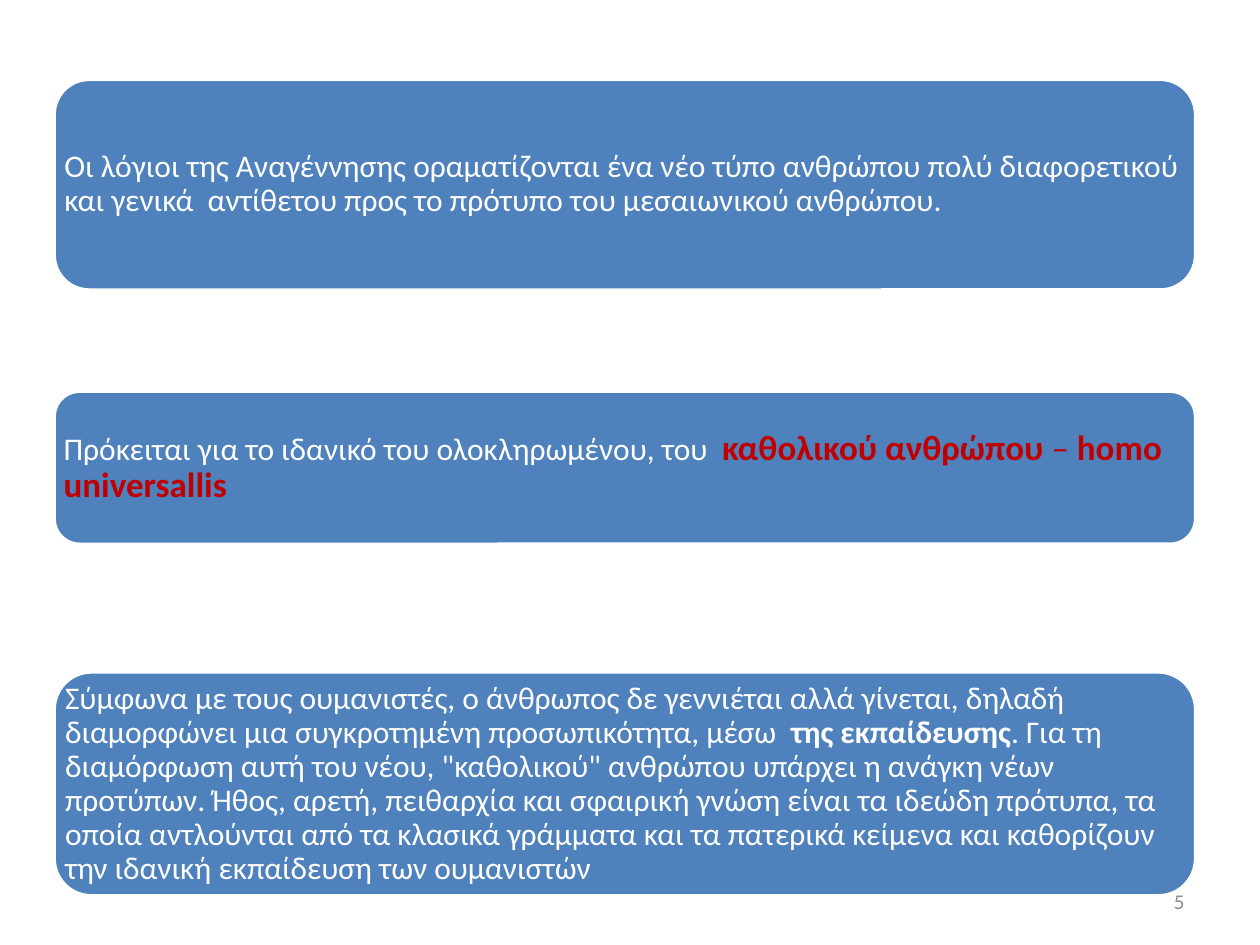
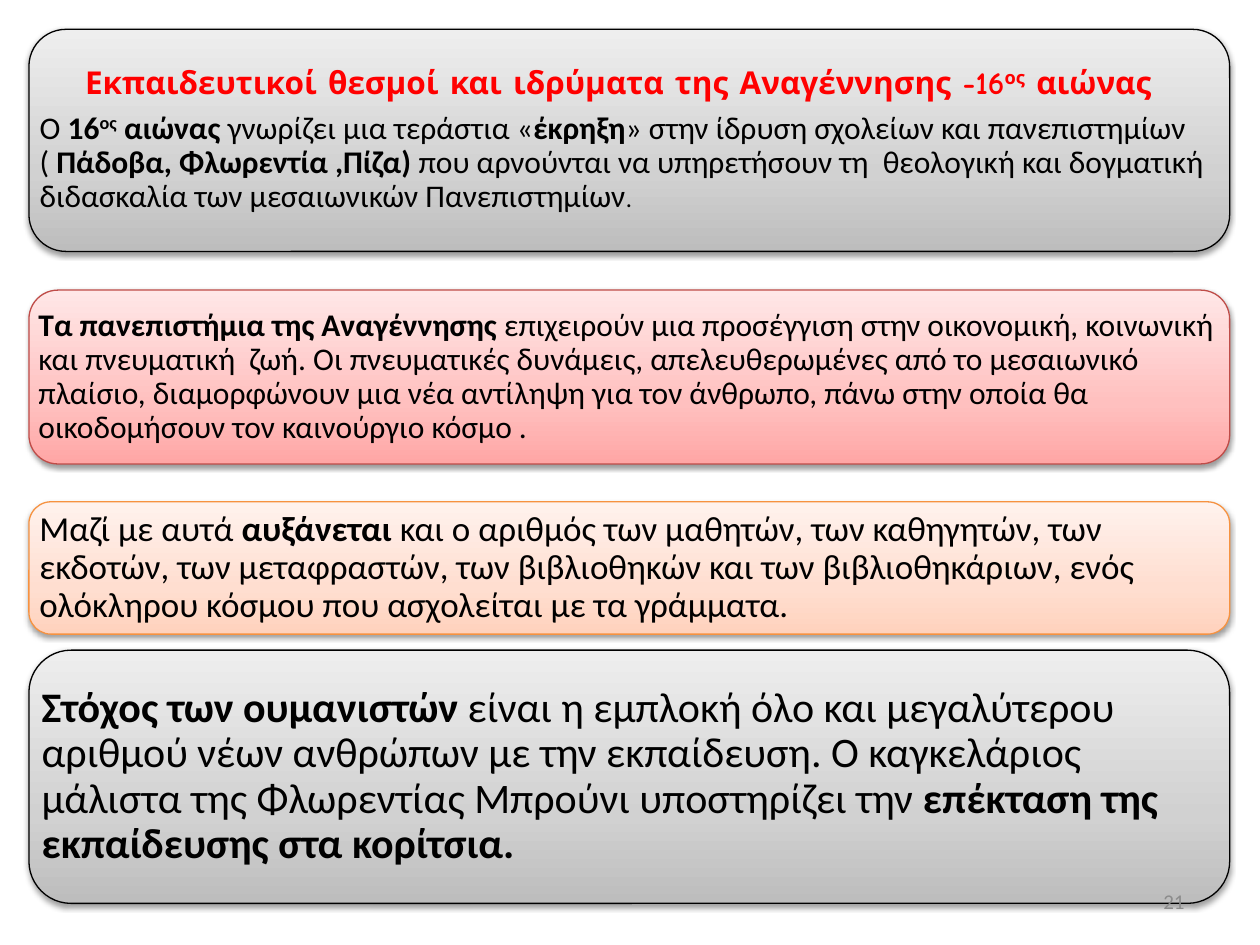
"""Build two slides on the Renaissance ideal of humanity and its schools."""
from lxml.etree import SubElement
from pptx import Presentation
from pptx.dml.color import RGBColor
from pptx.enum.shapes import MSO_SHAPE
from pptx.enum.text import MSO_ANCHOR, PP_ALIGN
from pptx.oxml import parse_xml
from pptx.oxml.ns import nsdecls, qn
from pptx.util import Inches, Pt

THEME = {
    "width": 10, "height": 7.5,
    "font": "Calibri", "title_font": "Comic Neue",
    "text": 18, "large": 20, "largest": 24, "small": 14, "number": 12,
    "leading": 0.9, "after": 0.35, "corner": 0.1667, "title_indent": 0.36,
    "grey": "8C8C8C", "ideal": "C00000", "title": "FF0000",
}
PALETTES = {
    "blue": {"stops": ["4F81BD"], "line": "FFFFFF", "weight": 2, "ink": "FFFFFF"},
    "grey": {"stops": ["BDBDBD", "D1D1D1", "EEEEEE"], "line": "000000", "weight": 0.75, "ink": "000000"},
    "red": {"stops": ["FFA6A5", "FFC0BF", "FFE7E7"], "line": "BF4C48", "weight": 0.75, "ink": "000000"},
    "orange": {"stops": ["FFD2BD", "FFDED0", "FFF2ED"], "line": "F69240", "weight": 0.75, "ink": "000000"},
}
BOLD = {"bold": True}
IDEAL = {"size": THEME["large"], "color": THEME["ideal"]}
TITLE = {"bold": True, "color": THEME["title"], "font": THEME["title_font"]}
RAISED = {"raised": True}

SLIDES = [
    {"number": "5", "left": 4.3, "width": 90.6, "panels": [
        {"top": 8.4, "height": 22.3, "palette": "blue", "size": "text", "paragraphs": [[
            ("Οι λόγιοι της Αναγέννησης οραματίζονται ένα νέο τύπο ανθρώπου πολύ διαφορετικού "
             "και γενικά  αντίθετου προς το πρότυπο του μεσαιωνικού ανθρώπου.", {})]]},
        {"top": 41.4, "height": 16.2, "palette": "blue", "size": "text", "paragraphs": [[
            ("Πρόκειται για το ιδανικό του ολοκληρωμένου, του  ", {}),
            ("καθολικού ανθρώπου ", IDEAL | BOLD), ("– ", IDEAL),
            ("homo universallis", IDEAL | BOLD)]]},
        {"top": 71.1, "height": 23.7, "palette": "blue", "size": "text", "paragraphs": [[
            ("Σύμφωνα με τους ουμανιστές, ο άνθρωπος δε γεννιέται αλλά γίνεται, δηλαδή "
             "διαμορφώνει μια συγκροτημένη προσωπικότητα, μέσω  ", {}),
            ("της εκπαίδευσης", BOLD),
            (". Για τη διαμόρφωση αυτή του νέου, \"καθολικού\" ανθρώπου υπάρχει η ανάγκη νέων "
             "προτύπων. Ήθος, αρετή, πειθαρχία και σφαιρική γνώση είναι τα ιδεώδη πρότυπα, τα "
             "οποία αντλούνται από τα κλασικά γράμματα και τα πατερικά κείμενα και καθορίζουν "
             "την ιδανική εκπαίδευση των ουμανιστών", {})]]},
    ]},
    {"number": "21", "left": 2.3, "width": 95.3, "panels": [
        {"top": 3.1, "height": 23.5, "palette": "grey", "size": "text",
         "first_indent": THEME["title_indent"], "paragraphs": [
            [("Εκπαιδευτικοί θεσμοί και ιδρύματα της Αναγέννησης -16", TITLE),
             ("ος", TITLE | RAISED), (" αιώνας", TITLE)],
            [("Ο ", {}), ("16", BOLD), ("ος", BOLD | RAISED), (" αιώνας ", BOLD),
             ("γνωρίζει μια τεράστια «", {}), ("έκρηξη", BOLD),
             ("» στην ίδρυση σχολείων και πανεπιστημίων ( ", {}),
             ("Πάδοβα, Φλωρεντία ,Πίζα)", BOLD),
             (" που αρνούνται να υπηρετήσουν τη  θεολογική και δογματική διδασκαλία των "
              "μεσαιωνικών Πανεπιστημίων", {}),
             (".", {"size": THEME["small"]})]]},
        {"top": 30.7, "height": 18.4, "palette": "red", "size": "text", "paragraphs": [[
            ("Τα πανεπιστήμια της Αναγέννησης ", BOLD),
            ("επιχειρούν μια προσέγγιση στην οικονομική, κοινωνική και πνευματική  ζωή. Οι "
             "πνευματικές δυνάμεις, απελευθερωμένες από το μεσαιωνικό πλαίσιο, διαμορφώνουν "
             "μια νέα αντίληψη για τον άνθρωπο, πάνω στην οποία θα οικοδομήσουν τον "
             "καινούργιο κόσμο .", {})]]},
        {"top": 53.1, "height": 14, "palette": "orange", "size": "large", "paragraphs": [[
            ("Μαζί με αυτά ", {}), ("αυξάνεται", BOLD),
            (" και ο αριθμός των μαθητών, των καθηγητών, των εκδοτών, των μεταφραστών, των "
             "βιβλιοθηκών και των βιβλιοθηκάριων, ενός ολόκληρου κόσμου που ασχολείται με τα "
             "γράμματα.", {})]]},
        {"top": 68.8, "height": 26.8, "palette": "grey", "size": "largest", "paragraphs": [[
            ("Στόχος των ουμανιστών ", BOLD),
            ("είναι η εμπλοκή όλο και μεγαλύτερου αριθμού νέων ανθρώπων με την εκπαίδευση. Ο "
             "καγκελάριος μάλιστα της Φλωρεντίας Μπρούνι υποστηρίζει την ", {}),
            ("επέκταση της εκπαίδευσης στα κορίτσια.", BOLD)]]},
    ]},
]
NUMBER_PLACE = (71.7, 92.7, 23.3, 5.3)


def place(left, top, width, height):
    """Turn percentages of the slide into lengths."""
    across, down = THEME["width"] / 100, THEME["height"] / 100
    return Inches(left * across), Inches(top * down), Inches(width * across), Inches(height * down)


def write(frame, paragraphs, *, size, color, pad, align=PP_ALIGN.LEFT,
          leading=1.0, after=0, first_indent=0):
    """Fill a text frame with paragraphs made of (text, style) runs."""
    frame.word_wrap = True
    frame.vertical_anchor = MSO_ANCHOR.MIDDLE
    frame.margin_left = frame.margin_right = frame.margin_top = frame.margin_bottom = Inches(pad)
    for index, runs in enumerate(paragraphs):
        paragraph = frame.add_paragraph() if index else frame.paragraphs[0]
        paragraph.alignment = align
        paragraph.line_spacing = leading
        paragraph.space_after = Pt(after)
        if first_indent and index == 0:
            paragraph._p.get_or_add_pPr().set("indent", str(Inches(first_indent)))
        for text, style in runs:
            run = paragraph.add_run()
            run.text = text
            run.font.name = style.get("font", THEME["font"])
            run.font.size = Pt(style.get("size", size))
            run.font.bold = style.get("bold", False)
            run.font.color.rgb = RGBColor.from_string(style.get("color", color))
            if style.get("raised"):
                run.font._element.set("baseline", "30000")


def shade(panel, stops):
    """Give a panel an upward gradient and a soft shadow below."""
    steps = "".join(f'<a:gs pos="{share * 1000}"><a:srgbClr val="{color}"/></a:gs>'
                    for share, color in zip((0, 35, 100), stops))
    gradient = parse_xml(f'<a:gradFill {nsdecls("a")} rotWithShape="1"><a:gsLst>{steps}</a:gsLst>'
                         '<a:lin ang="16200000" scaled="0"/></a:gradFill>')
    properties = panel._element.spPr
    properties.replace(properties.find(qn("a:solidFill")), gradient)
    shadow = SubElement(properties.find(qn("a:effectLst")), qn("a:outerShdw"),
                        blurRad=str(Pt(3.1)), dist=str(Pt(1.6)), dir="5400000", rotWithShape="0")
    tint = SubElement(shadow, qn("a:srgbClr"), val="000000")
    SubElement(tint, qn("a:alpha"), val="38000")


def add_panel(slide, left, width, content):
    """Draw one rounded panel with its text."""
    palette = PALETTES[content["palette"]]
    size = THEME[content["size"]]
    panel = slide.shapes.add_shape(MSO_SHAPE.ROUNDED_RECTANGLE,
                                   *place(left, content["top"], width, content["height"]))
    panel.adjustments[0] = THEME["corner"]
    panel.shadow.inherit = False
    panel.fill.solid()
    panel.fill.fore_color.rgb = RGBColor.from_string(palette["stops"][0])
    panel.line.color.rgb = RGBColor.from_string(palette["line"])
    panel.line.width = Pt(palette["weight"])
    if len(palette["stops"]) > 1:
        shade(panel, palette["stops"])
    corner_inset = 0.29 * THEME["corner"] * panel.height.inches
    write(panel.text_frame, content["paragraphs"], size=size, color=palette["ink"],
          pad=max(0, size / 240 - corner_inset), leading=THEME["leading"],
          after=size * THEME["after"], first_indent=content.get("first_indent", 0))


def main():
    """Build and save the slides."""
    deck = Presentation()
    deck.slide_width, deck.slide_height = Inches(THEME["width"]), Inches(THEME["height"])
    for content in SLIDES:
        slide = deck.slides.add_slide(deck.slide_layouts[6])
        for panel in content["panels"]:
            add_panel(slide, content["left"], content["width"], panel)
        number = slide.shapes.add_textbox(*place(*NUMBER_PLACE))
        write(number.text_frame, [[(content["number"], {})]], size=THEME["number"],
              color=THEME["grey"], pad=0.1, align=PP_ALIGN.RIGHT)
    deck.save("out.pptx")


if __name__ == "__main__":
    main()
